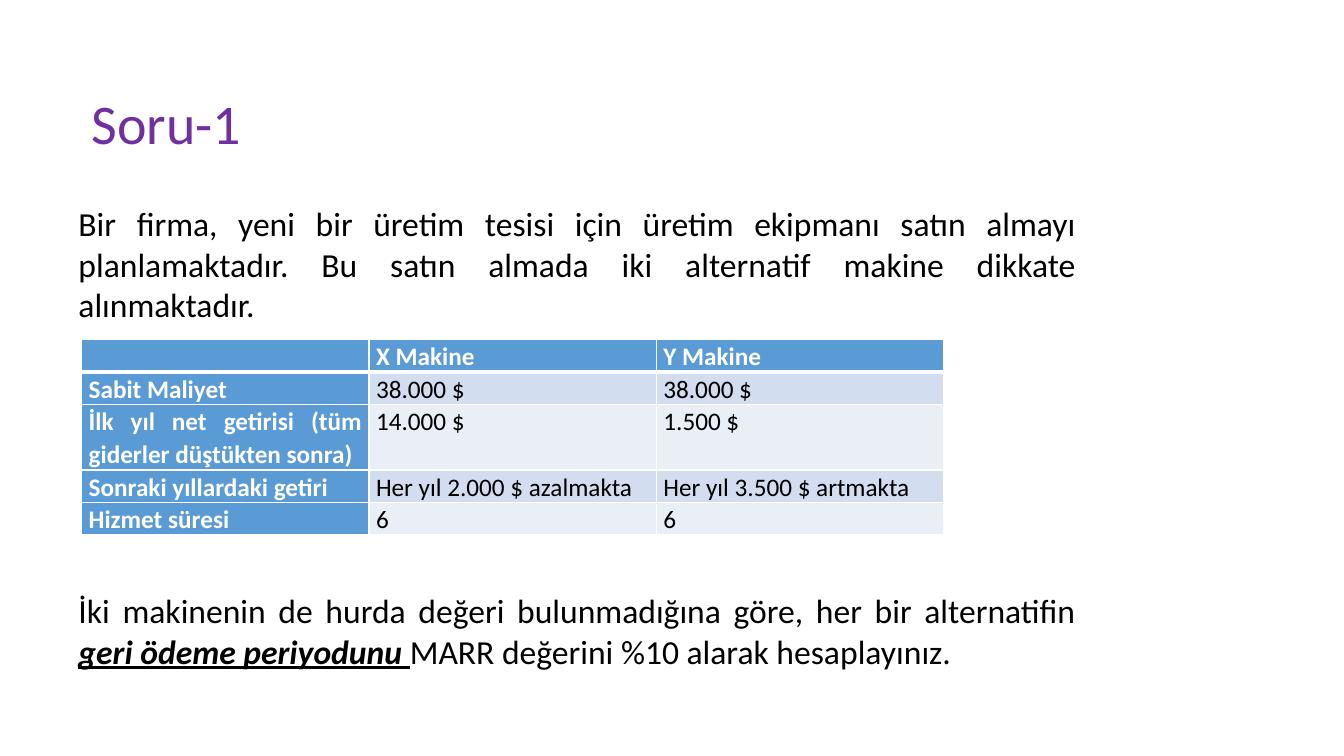
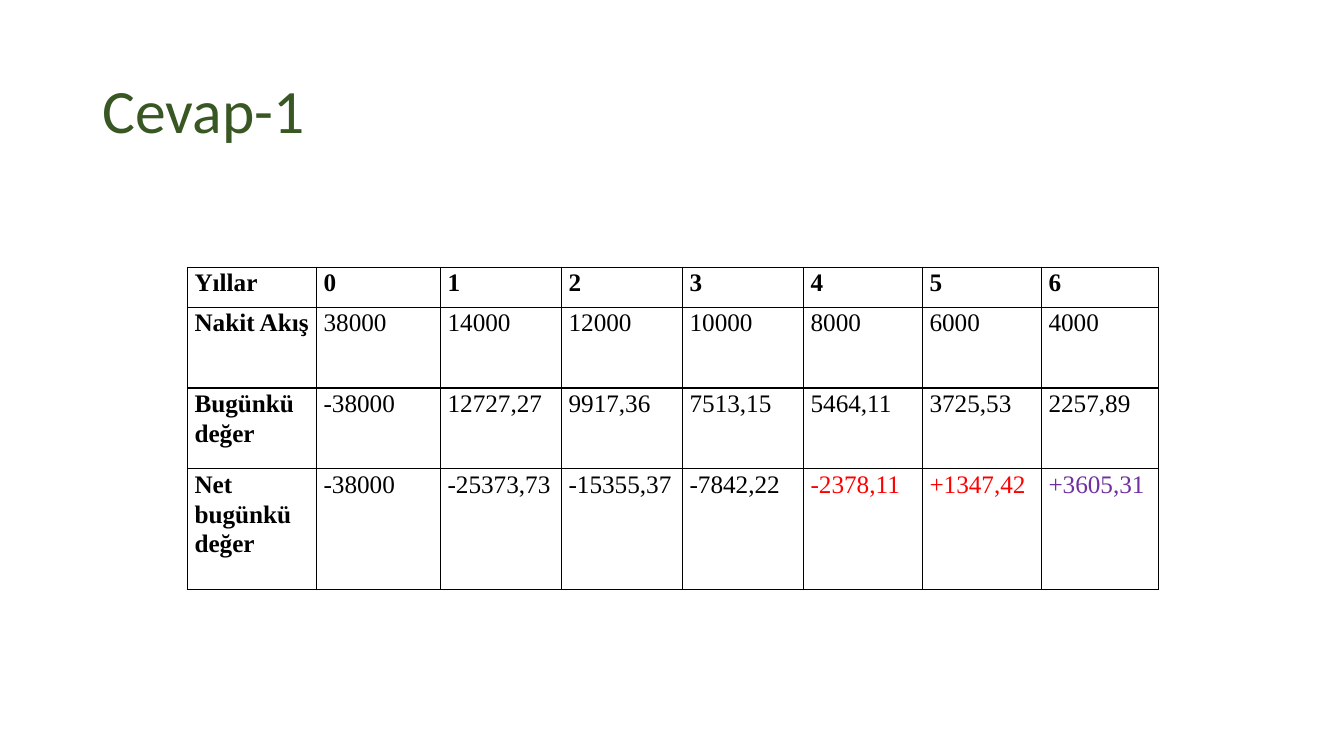
"""Build the payback period question slide and its answer slide."""
from lxml import etree
from pptx import Presentation
from pptx import util as u
from pptx.dml.color import RGBColor
from pptx.enum import text
from pptx.oxml import ns

BODY_FONT, TABLE_FONT = "Calibri", "Times New Roman"
BLACK, WHITE, RED, PURPLE, GREEN = "000000", "FFFFFF", "FF0000", "7030A0", "385723"
BLUE, BANDS = "5B9BD5", ("EAEFF7", "D2DEEF")

MACHINES = [
    ["", "X Makine", "Y Makine"],
    ["Sabit Maliyet", "38.000 $", "38.000 $"],
    ["İlk yıl net getirisi (tüm giderler düştükten sonra)", "14.000 $", "1.500 $"],
    ["Sonraki yıllardaki getiri", "Her yıl 2.000 $ azalmakta", "Her yıl 3.500 $ artmakta"],
    ["Hizmet süresi", "6", "6"],
]
CASH_FLOWS = [
    ["Yıllar", "0", "1", "2", "3", "4", "5", "6"],
    ["Nakit Akış", "38000", "14000", "12000", "10000", "8000", "6000", "4000"],
    ["Bugünkü değer", "-38000", "12727,27", "9917,36", "7513,15", "5464,11", "3725,53", "2257,89"],
    ["Net bugünkü değer", "-38000", "-25373,73", "-15355,37", "-7842,22", "-2378,11", "+1347,42",
     "+3605,31"],
]
RESULT_COLORS = {(3, 5): RED, (3, 6): RED, (3, 7): PURPLE}
QUESTION = [
    [("Bir firma, yeni bir üretim tesisi için üretim ekipmanı satın almayı planlamaktadır. "
      "Bu satın almada iki alternatif makine dikkate alınmaktadır.", False)],
    [("İki makinenin de hurda değeri bulunmadığına göre, her bir alternatifin ", False),
     ("geri ödeme periyodunu ", True),
     ("MARR değerini %10 alarak hesaplayınız.", False)],
]


def rgb(color):
    """Turn a hex string into a colour."""
    return RGBColor.from_string(color)


def set_font(font, size, color, name=BODY_FONT, bold=False):
    """Set the look of a font."""
    font.size, font.name, font.bold = u.Pt(size), name, bold
    font.color.rgb = rgb(color)


def add_text_frame(s, left, top, width, height):
    """Add a wrapping, vertically centred text box and return its frame."""
    box = s.shapes.add_textbox(*map(u.Inches, (left, top, width, height)))
    tf = box.text_frame
    tf.word_wrap = True
    tf.vertical_anchor = text.MSO_ANCHOR.MIDDLE
    return tf


def add_title(s, title, left, top, size, color):
    """Add the slide title."""
    p = add_text_frame(s, left, top, 11.5, 1.45).paragraphs[0]
    p.text = title
    p.line_spacing = 0.9
    set_font(p.font, size, color)


def add_question(s, paragraphs, gap):
    """Add justified paragraphs set apart by a gap in points."""
    tf = add_text_frame(s, 0.68, 1.96, 10.09, 4.75)
    for i, runs in enumerate(paragraphs):
        p = tf.add_paragraph() if i else tf.paragraphs[0]
        p.alignment = text.PP_ALIGN.JUSTIFY
        p.space_before = u.Pt(gap if i else 0)
        set_font(p.font, 24, BLACK)
        for words, stressed in runs:
            r = p.add_run()
            r.text = words
            if stressed:
                r.font.bold = r.font.italic = r.font.underline = True


def set_border(cell, side, color, width):
    """Draw one border of a cell, its width in points."""
    line = etree.SubElement(cell._tc.get_or_add_tcPr(), ns.qn(f"a:ln{side}"), w=str(u.Pt(width)))
    fill = etree.SubElement(line, ns.qn("a:solidFill"))
    etree.SubElement(fill, ns.qn("a:srgbClr"), val=color)


def fill_cell(cell, words, color, font, bold):
    """Write justified text into a cell."""
    cell.margin_left = cell.margin_right = u.Inches(0.07)
    cell.margin_top = cell.margin_bottom = 0
    p = cell.text_frame.paragraphs[0]
    p.text = words
    p.alignment = text.PP_ALIGN.JUSTIFY
    p.line_spacing = 1.07
    set_font(p.font, 18, color, font, bold)


def add_table(s, rows, left, top, widths, heights, style):
    """Add a table; style maps row and column to fill, text colour, font and borders."""
    size = (left, top, sum(widths), sum(heights))
    table = s.shapes.add_table(len(rows), len(widths), *map(u.Inches, size)).table
    table.first_row = table.horz_banding = False
    for column, width in zip(table.columns, widths):
        column.width = u.Inches(width)
    for i, (row, height) in enumerate(zip(rows, heights)):
        table.rows[i].height = u.Inches(height)
        for j, words in enumerate(row):
            fill, color, font, border, header_rule = style(i, j)
            cell = table.cell(i, j)
            fill_cell(cell, words, color, font, bold=i == 0 or j == 0)
            for side in "LRTB":
                under_header = (i, side) in ((0, "B"), (1, "T"))
                set_border(cell, side, border, header_rule if under_header else 1)
            if fill:
                cell.fill.solid()
                cell.fill.fore_color.rgb = rgb(fill)
            else:
                cell.fill.background()


def machine_style(i, j):
    """Give blue headings and banded rows."""
    heading = i == 0 or j == 0
    return BLUE if heading else BANDS[i % 2], WHITE if heading else BLACK, BODY_FONT, WHITE, 3


def cash_flow_style(i, j):
    """Give a plain grid with coloured results."""
    return None, RESULT_COLORS.get((i, j), BLACK), TABLE_FONT, BLACK, 1


def main():
    """Build and save the slides."""
    prs = Presentation()
    prs.slide_width, prs.slide_height = u.Inches(13.33), u.Inches(7.5)
    blank = prs.slide_layouts[6]

    s = prs.slides.add_slide(blank)
    add_title(s, "Soru-1", 0.81, 0.53, 40, PURPLE)
    add_table(s, MACHINES, 0.81, 3.37, [2.85] * 3, [0.32, 0.32, 0.65, 0.32, 0.32], machine_style)
    add_question(s, QUESTION, gap=190)

    s = prs.slides.add_slide(blank)
    add_title(s, "Cevap-1", 0.92, 0.4, 44, GREEN)
    add_table(s, CASH_FLOWS, 1.86, 2.65, [1.28, 1.23, 1.2, 1.2, 1.2, 1.18, 1.18, 1.16],
              [0.4, 0.8, 0.8, 1.2], cash_flow_style)

    prs.save("out.pptx")


if __name__ == "__main__":
    main()
